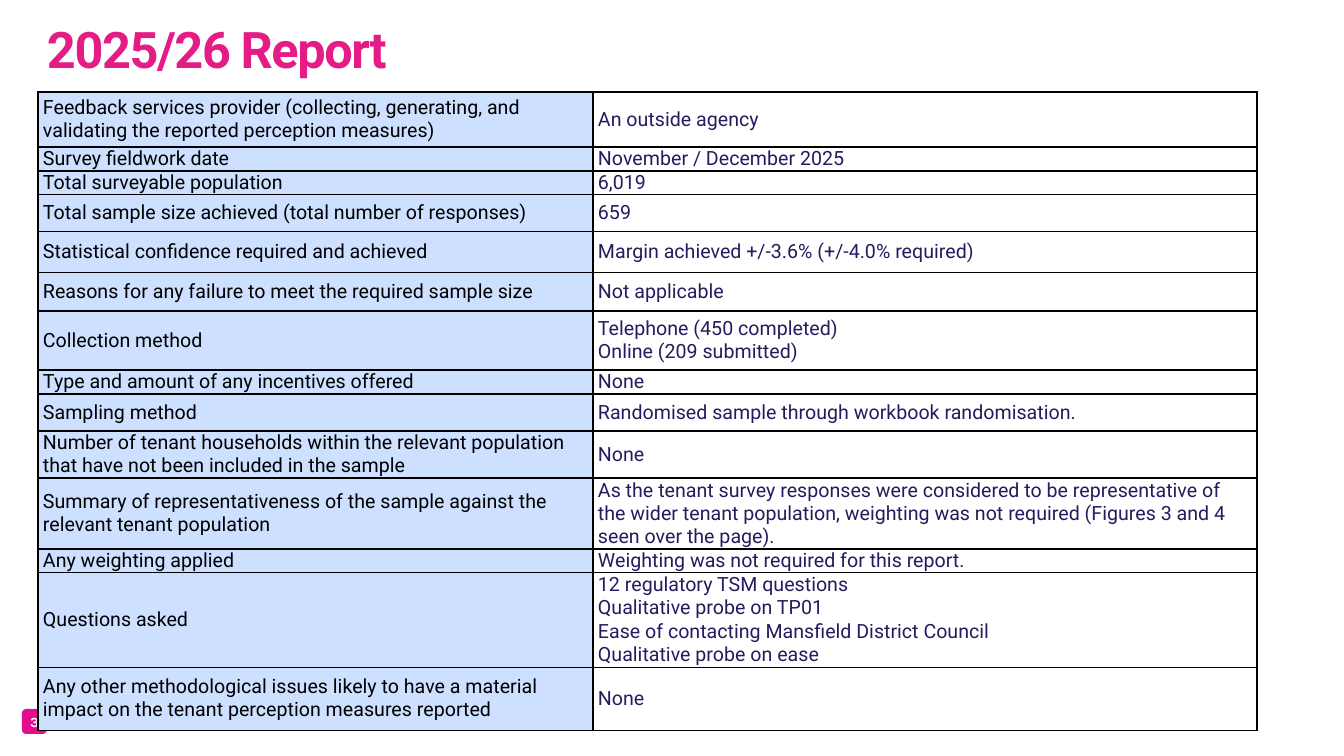
from lxml.etree import SubElement
from pptx import Presentation
from pptx.dml.color import RGBColor
from pptx.enum.shapes import MSO_SHAPE
from pptx.enum.text import MSO_ANCHOR, MSO_AUTO_SIZE, PP_ALIGN
from pptx.oxml.ns import qn
from pptx.util import Emu, Pt


def px(length):
    return Emu(round(length * 914400 / 100.8))


def rgb(value):
    return RGBColor.from_string(value)


methodology = [
    (55, "Feedback services provider (collecting, generating, and validating the reported perception measures)",
     "An outside agency"),
    (24, "Survey fieldwork date", "November / December 2025"),
    (23, "Total surveyable population", "6,019"),
    (37, "Total sample size achieved (total number of responses)", "659"),
    (41, "Statistical confidence required and achieved", "Margin achieved +/-3.6% (+/-4.0% required)"),
    (39, "Reasons for any failure to meet the required sample size", "Not applicable"),
    (59, "Collection method", "Telephone (450 completed)\nOnline (209 submitted)"),
    (24, "Type and amount of any incentives offered", "None"),
    (37, "Sampling method", "Randomised sample through workbook randomisation."),
    (47, "Number of tenant households within the relevant population that have not been included in the sample",
     "None"),
    (71, "Summary of representativeness of the sample against the relevant tenant population",
     "As the tenant survey responses were considered to be representative of the wider tenant population, "
     "weighting was not required (Figures 3 and 4 seen over the page)."),
    (23, "Any weighting applied", "Weighting was not required for this report."),
    (95, "Questions asked",
     "12 regulatory TSM questions\nQualitative probe on TP01\n"
     "Ease of contacting Mansfield District Council\nQualitative probe on ease"),
    (63, "Any other methodological issues likely to have a material impact on the tenant perception measures reported",
     "None"),
]
column_styles = [("CDE0FF", "000000"), ("FFFFFF", "291A5F")]

deck = Presentation()
deck.slide_width, deck.slide_height = px(1344), px(756)
slide = deck.slides.add_slide(deck.slide_layouts[5])

report_title = slide.shapes.title
report_title.left, report_title.top = px(47), px(0)
report_title.width, report_title.height = px(747), px(79)
heading = report_title.text_frame
heading.text = "2025/26 Report"
heading.auto_size = MSO_AUTO_SIZE.NONE
heading.vertical_anchor = MSO_ANCHOR.BOTTOM
heading.margin_left = heading.margin_right = heading.margin_top = heading.margin_bottom = 0
heading_line = heading.paragraphs[0]
heading_line.alignment = PP_ALIGN.LEFT
heading_line.line_spacing = Pt(60)
heading_line.font.name = "Roboto"
heading_line.font.size = Pt(36)
heading_line.font.bold = True
heading_line.font.color.rgb = rgb("E41C86")
heading_line.runs[0].font._element.set("spc", "-100")

page_badge = slide.shapes.add_shape(MSO_SHAPE.ROUNDED_RECTANGLE, px(22), px(709), px(25), px(25))
page_badge.shadow.inherit = False
page_badge.fill.solid()
page_badge.fill.fore_color.rgb = rgb("E30D8F")
page_badge.line.fill.background()
page_number = page_badge.text_frame
page_number.text = "3"
page_number.vertical_anchor = MSO_ANCHOR.MIDDLE
page_number.margin_left = page_number.margin_right = page_number.margin_top = page_number.margin_bottom = 0
page_line = page_number.paragraphs[0]
page_line.alignment = PP_ALIGN.CENTER
page_line.line_spacing = Pt(12)
page_line.font.name = "Karla"
page_line.font.size = Pt(10)
page_line.font.bold = True
page_line.font.color.rgb = rgb("FFFFFF")

total_height = sum(height for height, *_ in methodology)
report = slide.shapes.add_table(len(methodology), 2, px(38), px(92), px(1219), px(total_height)).table
report.first_row = report.horz_banding = False
report.columns[0].width, report.columns[1].width = px(555), px(664)

for row, (height, *texts) in enumerate(methodology):
    report.rows[row].height = px(height)
    for column, (text, (background, ink)) in enumerate(zip(texts, column_styles)):
        cell = report.cell(row, column)
        cell.text = text
        cell.vertical_anchor = MSO_ANCHOR.MIDDLE
        cell.margin_left = cell.margin_right = px(5)
        cell.margin_top = cell.margin_bottom = 0
        for side in ("a:lnL", "a:lnR", "a:lnT", "a:lnB"):
            border = SubElement(cell._tc.get_or_add_tcPr(), qn(side), w=str(Pt(1)))
            SubElement(SubElement(border, qn("a:solidFill")), qn("a:srgbClr"), val="000000")
        cell.fill.solid()
        cell.fill.fore_color.rgb = rgb(background)
        for paragraph in cell.text_frame.paragraphs:
            paragraph.font.name = "Roboto"
            paragraph.font.size = Pt(14)
            paragraph.font.color.rgb = rgb(ink)

deck.save("out.pptx")
